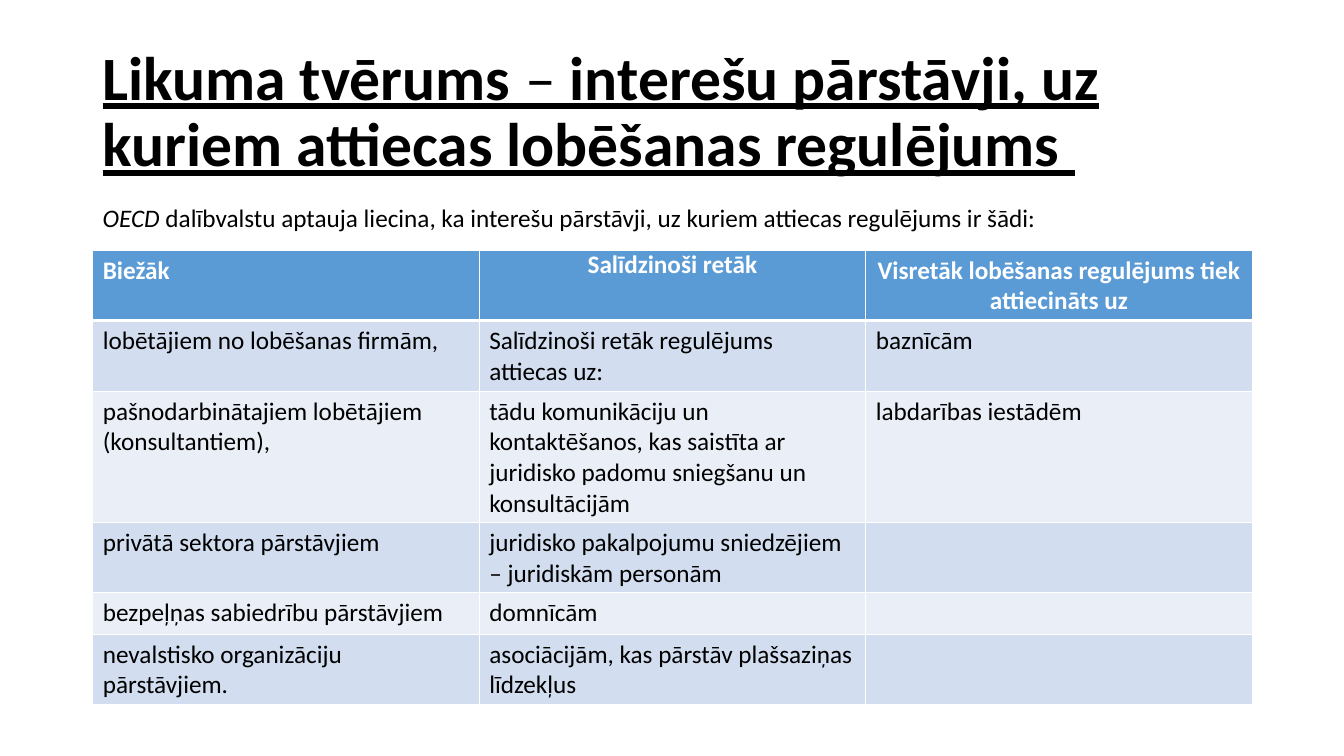
from typing import NamedTuple

from lxml.etree import SubElement
from pptx import Presentation
from pptx.dml.color import RGBColor
from pptx.enum.text import MSO_ANCHOR, PP_ALIGN
from pptx.oxml.ns import qn
from pptx.util import Inches, Pt

FONT = "Calibri"
BLACK, WHITE = "000000", "FFFFFF"
HEADER_FILL = "5B9BD5"
BAND_FILLS = ("D2DEEF", "EAEFF7")
LEFT, CONTENT_WIDTH = 0.92, 11.5
ROW_HEIGHT = 0.41


class Header(NamedTuple):
    text: str
    align: PP_ALIGN = PP_ALIGN.CENTER
    flush: bool = False


HEADERS = (
    Header("Biežāk", PP_ALIGN.LEFT),
    Header("Salīdzinoši retāk", flush=True),
    Header("Visretāk lobēšanas regulējums tiek attiecināts uz"),
)
ROWS = (
    ("lobētājiem no lobēšanas firmām,", "Salīdzinoši retāk regulējums attiecas uz:", "baznīcām"),
    ("pašnodarbinātajiem lobētājiem (konsultantiem),",
     "tādu komunikāciju un kontaktēšanos, kas saistīta ar juridisko padomu sniegšanu un konsultācijām",
     "labdarības iestādēm"),
    ("privātā sektora pārstāvjiem", "juridisko pakalpojumu sniedzējiem – juridiskām personām", ""),
    ("bezpeļņas sabiedrību pārstāvjiem", "domnīcām", ""),
    ("nevalstisko organizāciju pārstāvjiem.", "asociācijām, kas pārstāv plašsaziņas līdzekļus", ""),
)


def color(value: str) -> RGBColor:
    return RGBColor.from_string(value)


def add_text(paragraph, text: str, *, size: float = 18, fill: str = BLACK,
             bold: bool = False, italic: bool = False, underline: bool = False) -> None:
    run = paragraph.add_run()
    run.text = text
    font = run.font
    font.name, font.size = FONT, Pt(size)
    font.bold, font.italic, font.underline = bold, italic, underline
    font.color.rgb = color(fill)


def add_text_box(slide, top: float, width: float, height: float, anchor: MSO_ANCHOR):
    box = slide.shapes.add_textbox(Inches(LEFT), Inches(top), Inches(width), Inches(height))
    box.text_frame.word_wrap = True
    box.text_frame.vertical_anchor = anchor
    return box.text_frame.paragraphs[0]


def style_cell(cell, fill: str, top_width: float, bottom_width: float) -> None:
    # Borders come before the fill in the cell properties
    properties = cell._tc.get_or_add_tcPr()
    for side, width in (("L", 1), ("R", 1), ("T", top_width), ("B", bottom_width)):
        line = SubElement(properties, qn(f"a:ln{side}"), w=str(Pt(width)))
        solid = SubElement(line, qn("a:solidFill"))
        SubElement(solid, qn("a:srgbClr"), val=WHITE)
    cell.fill.solid()
    cell.fill.fore_color.rgb = color(fill)


def add_lobbying_table(slide) -> None:
    frame = slide.shapes.add_table(len(ROWS) + 1, len(HEADERS), Inches(LEFT), Inches(2.48),
                                   Inches(CONTENT_WIDTH), Inches(4.51))
    table = frame.table
    for row in table.rows:
        row.height = Inches(ROW_HEIGHT)
    frame.height = Inches(4.51)

    # Header row
    for column, header in enumerate(HEADERS):
        cell = table.cell(0, column)
        style_cell(cell, HEADER_FILL, 1, 3)
        if header.flush:
            cell.margin_left = cell.margin_right = Inches(0.07)
            cell.margin_top = cell.margin_bottom = Inches(0)
        paragraph = cell.text_frame.paragraphs[0]
        paragraph.alignment = header.align
        add_text(paragraph, header.text, fill=WHITE, bold=True)

    # Banded body rows
    for index, texts in enumerate(ROWS):
        for column, text in enumerate(texts):
            cell = table.cell(index + 1, column)
            style_cell(cell, BAND_FILLS[index % 2], 3 if index == 0 else 1, 1)
            paragraph = cell.text_frame.paragraphs[0]
            if text:
                add_text(paragraph, text)
            else:
                paragraph.font.size = Pt(18)


def main() -> None:
    presentation = Presentation()
    presentation.slide_width, presentation.slide_height = Inches(13.33), Inches(7.5)
    slide = presentation.slides.add_slide(presentation.slide_layouts[6])

    # Title
    title = add_text_box(slide, 0.4, CONTENT_WIDTH, 1.45, MSO_ANCHOR.MIDDLE)
    title.line_spacing = 0.9
    for text, bold in (
        ("Likuma tvērums ", True),
        ("– ", False),
        ("interešu pārstāvji, uz kuriem attiecas lobēšanas regulējums ", True),
    ):
        add_text(title, text, size=44, bold=bold, underline=True)

    # Table and the sentence that introduces it
    add_lobbying_table(slide)
    introduction = add_text_box(slide, 1.96, 10.05, 0.4, MSO_ANCHOR.TOP)
    add_text(introduction, "OECD", italic=True)
    add_text(introduction, " dalībvalstu aptauja liecina, ka interešu pārstāvji, "
                           "uz kuriem attiecas regulējums ir šādi:")

    presentation.save("out.pptx")


if __name__ == "__main__":
    main()
